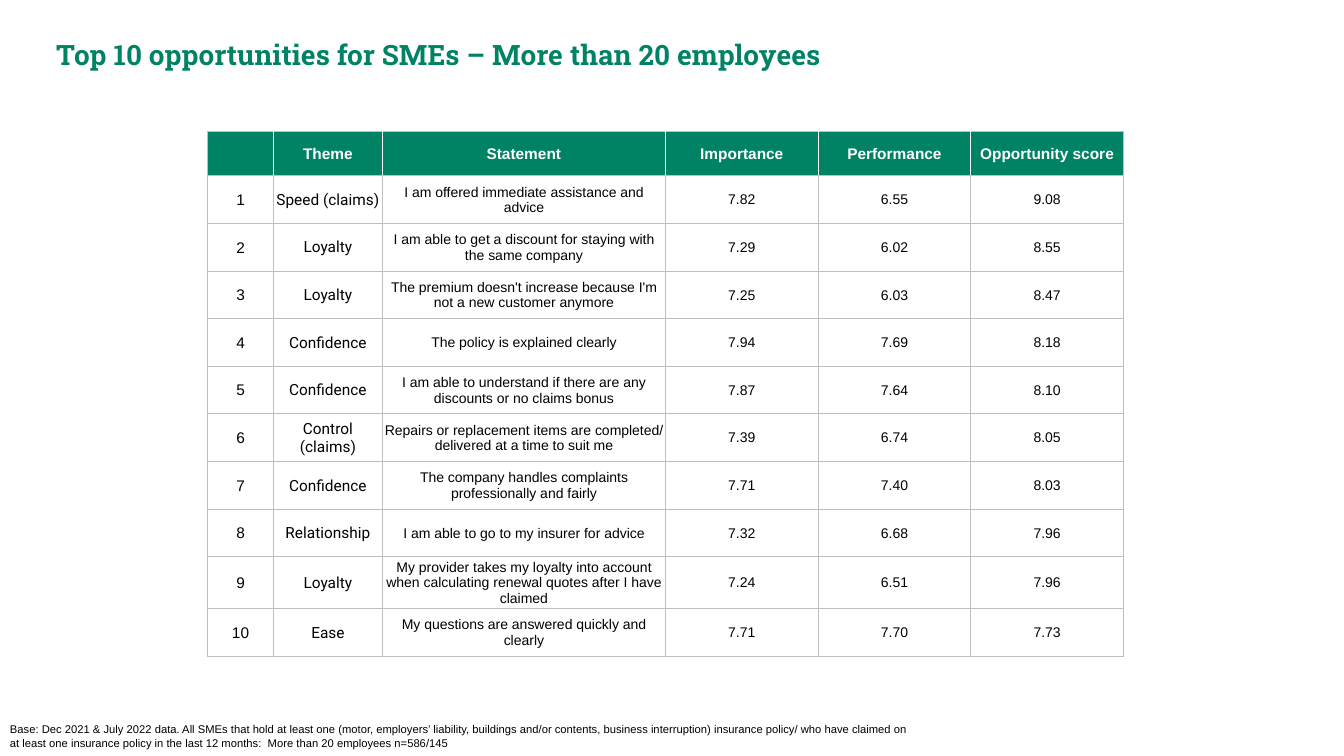
import dataclasses

import lxml.etree
import pptx
import pptx.dml.color
import pptx.enum.text
import pptx.oxml.ns
import pptx.util


@dataclasses.dataclass(frozen=True)
class Theme:
    green: str = "008265"
    white: str = "FFFFFF"
    black: str = "000000"
    grey: str = "BFBFBF"
    sans: str = "Arial"
    round: str = "Roboto"
    slab: str = "Roboto Slab"
    title: int = 20
    label: int = 11
    body: int = 10
    note: int = 8
    thin: float = 0.75
    thick: float = 1
    inset: float = 0.01


@dataclasses.dataclass
class Page:
    theme: Theme
    slide: object
    width: int
    height: int

    def across(self, share):
        return round(self.width * share / 100)

    def down(self, share):
        return round(self.height * share / 100)

    def place(self, left, top, width, height):
        return self.across(left), self.down(top), self.across(width), self.down(height)

    def style(self, frame, size, font, color, bold=False):
        for para in frame.paragraphs:
            for run in para.runs:
                run.font.size = pptx.util.Pt(size)
                run.font.name = font
                run.font.bold = bold
                run.font.color.rgb = pptx.dml.color.RGBColor.from_string(color)

    def text(self, words, box, size, font, color, bold=False):
        frame = self.slide.shapes.add_textbox(*self.place(*box)).text_frame
        frame.word_wrap = True
        frame.text = words
        self.style(frame, size, font, color, bold)

    def edge(self, cell, side, color, weight):
        tag = pptx.oxml.ns.qn
        props = cell._tc.get_or_add_tcPr()
        line = lxml.etree.SubElement(props, tag(f"a:ln{side}"), w=str(pptx.util.Pt(weight)))
        fill = lxml.etree.SubElement(line, tag("a:solidFill"))
        lxml.etree.SubElement(fill, tag("a:srgbClr"), val=color)

    def cell(self, cell, words, look, head, sides):
        theme = self.theme
        for side in "LRTB":
            inner = head and side in sides
            color = theme.white if inner else theme.grey
            self.edge(cell, side, color, theme.thick if inner else theme.thin)
        if head:
            cell.fill.solid()
            cell.fill.fore_color.rgb = pptx.dml.color.RGBColor.from_string(theme.green)
        else:
            cell.fill.background()
        inset = pptx.util.Inches(theme.inset)
        cell.margin_left = cell.margin_right = cell.margin_top = inset
        cell.margin_bottom = 0
        cell.vertical_anchor = pptx.enum.text.MSO_ANCHOR.MIDDLE
        frame = cell.text_frame
        frame.text = words
        frame.paragraphs[0].alignment = pptx.enum.text.PP_ALIGN.CENTER
        self.style(frame, *look)

    def table(self, data, left, top, widths, heights):
        theme = self.theme
        box = self.place(left, top, sum(widths), sum(heights))
        table = self.slide.shapes.add_table(len(data), len(widths), *box).table
        table.first_row = table.horz_banding = False
        for col, width in zip(table.columns, widths):
            col.width = self.across(width)
        for row, height in zip(table.rows, heights):
            row.height = self.down(height)
        top_look = (theme.label, theme.sans, theme.white, True)
        plain = (theme.body, theme.sans, theme.black)
        looks = [(theme.label, theme.sans, theme.black),
                 (theme.label, theme.round, theme.black)] + [plain] * 4
        last = len(widths) - 1
        for r, row in enumerate(data):
            for c, words in enumerate(row):
                sides = ("L" if c else "") + ("R" if c < last else "")
                look = looks[c] if r else top_look
                self.cell(table.cell(r, c), words, look, r == 0, sides)


HEAD = ("", "Theme", "Statement", "Importance", "Performance", "Opportunity score")
ITEMS = [
    ("Speed (claims)", "I am offered immediate assistance and advice", "7.82", "6.55", "9.08"),
    ("Loyalty", "I am able to get a discount for staying with the same company", "7.29", "6.02", "8.55"),
    ("Loyalty", "The premium doesn't increase because I'm not a new customer anymore", "7.25", "6.03", "8.47"),
    ("Confidence", "The policy is explained clearly", "7.94", "7.69", "8.18"),
    ("Confidence", "I am able to understand if there are any discounts or no claims bonus", "7.87", "7.64", "8.10"),
    ("Control (claims)", "Repairs or replacement items are completed/ delivered at a time to suit me", "7.39", "6.74", "8.05"),
    ("Confidence", "The company handles complaints professionally and fairly", "7.71", "7.40", "8.03"),
    ("Relationship", "I am able to go to my insurer for advice", "7.32", "6.68", "7.96"),
    ("Loyalty", "My provider takes my loyalty into account when calculating renewal quotes after I have claimed", "7.24", "6.51", "7.96"),
    ("Ease", "My questions are answered quickly and clearly", "7.71", "7.70", "7.73"),
]
BASE = (
    "Base: Dec 2021 & July 2022 data. All SMEs that hold at least one (motor, employers’ liability, "
    "buildings and/or contents, business interruption) insurance policy/ who have claimed on at least "
    "one insurance policy in the last 12 months:  More than 20 employees n=586/145"
)


def main():
    deck = pptx.Presentation()
    deck.slide_width = pptx.util.Inches(13.33)
    deck.slide_height = pptx.util.Inches(7.5)
    theme = Theme()
    slide = deck.slides.add_slide(deck.slide_layouts[6])
    page = Page(theme, slide, deck.slide_width, deck.slide_height)
    page.text("Top 10 opportunities for SMEs – More than 20 employees",
              (3.45, 4.27, 92.12, 5.87), theme.title, theme.slab, theme.green, True)
    data = [HEAD] + [(str(rank), *item) for rank, item in enumerate(ITEMS, 1)]
    widths = [4.9, 8.1, 21.07] + [11.36] * 3
    heights = [5.8] + [6.3] * 8 + [6.87, 6.3]
    page.table(data, 15.45, 17.45, widths, heights)
    page.text(BASE, (0, 94.93, 69.24, 5.07), theme.note, theme.sans, theme.black)
    deck.save("out.pptx")


if __name__ == "__main__":
    main()
